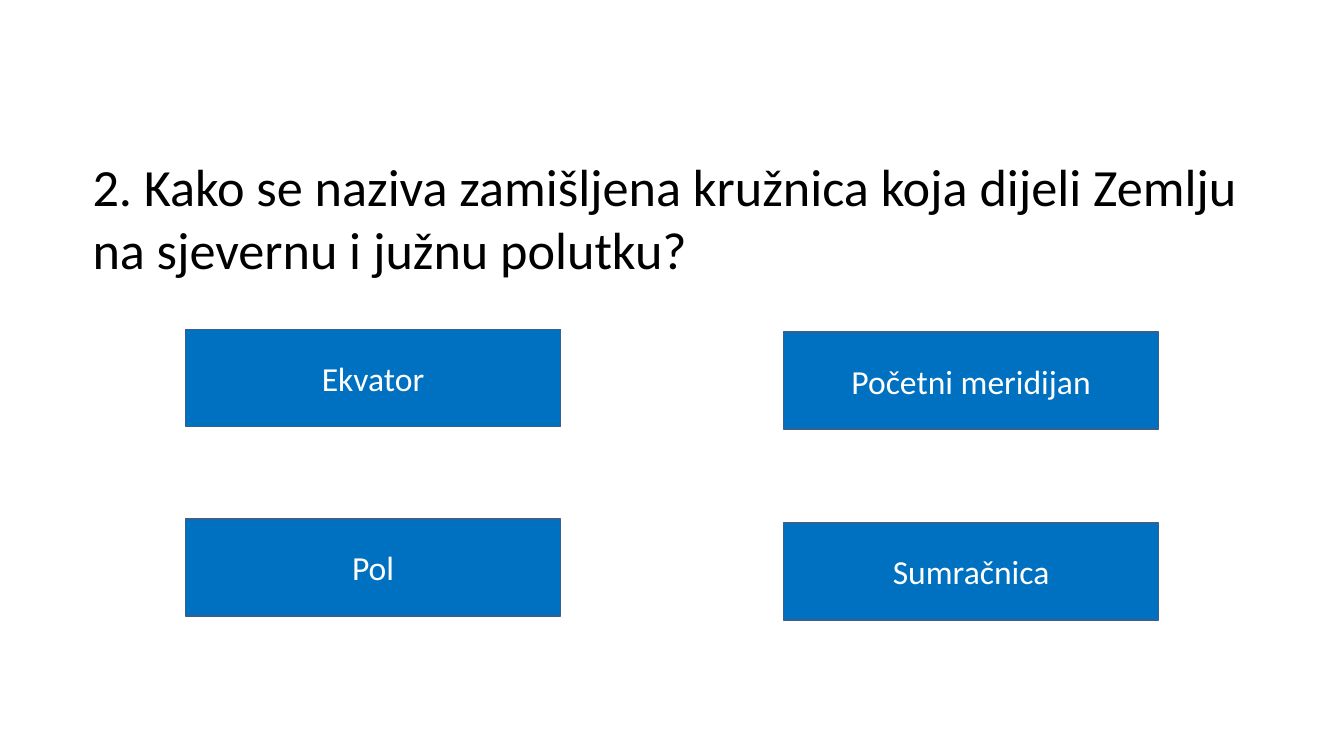
from dataclasses import dataclass

import pptx
import pptx.dml.color
import pptx.enum.shapes
import pptx.enum.text
import pptx.slide
import pptx.text.text
import pptx.util

Pt = pptx.util.Pt
RGBColor = pptx.dml.color.RGBColor

FONT = "Calibri"
BLACK = RGBColor(0x00, 0x00, 0x00)
WHITE = RGBColor(0xFF, 0xFF, 0xFF)
BLUE = RGBColor(0x00, 0x70, 0xC0)
BORDER = RGBColor(0x3A, 0x5F, 0x8C)

LEFT_COLUMN, RIGHT_COLUMN = 99.4, 419.8
ANSWER_WIDTH, ANSWER_HEIGHT = 200.9, 52

QUESTION = "2. Kako se naziva zamišljena kružnica koja dijeli Zemlju na sjevernu i južnu polutku?"


@dataclass
class Answer:
    text: str
    left: float
    top: float


ANSWERS = [
    Answer("Ekvator", LEFT_COLUMN, 176.4),
    Answer("Početni meridijan", RIGHT_COLUMN, 178),
    Answer("Pol", LEFT_COLUMN, 278),
    Answer("Sumračnica", RIGHT_COLUMN, 280.2),
]


def write(tf: pptx.text.text.TextFrame, text: str, size: float, color: RGBColor) -> None:
    tf.text = text
    tf.word_wrap = True
    font = tf.paragraphs[0].runs[0].font
    font.name = FONT
    font.size = Pt(size)
    font.color.rgb = color


def add_question(s: pptx.slide.Slide, text: str) -> None:
    sp = s.shapes.add_textbox(Pt(42.5), Pt(79.2), Pt(648.7), Pt(74.9))
    write(sp.text_frame, text, 28, BLACK)
    sp.text_frame.auto_size = pptx.enum.text.MSO_AUTO_SIZE.SHAPE_TO_FIT_TEXT


def add_answer(s: pptx.slide.Slide, answer: Answer) -> None:
    sp = s.shapes.add_shape(
        pptx.enum.shapes.MSO_SHAPE.RECTANGLE,
        Pt(answer.left), Pt(answer.top), Pt(ANSWER_WIDTH), Pt(ANSWER_HEIGHT),
    )
    sp.shadow.inherit = False
    sp.fill.solid()
    sp.fill.fore_color.rgb = BLUE
    sp.line.color.rgb = BORDER
    sp.line.width = Pt(0)
    tf = sp.text_frame
    write(tf, answer.text, 18, WHITE)
    tf.vertical_anchor = pptx.enum.text.MSO_ANCHOR.MIDDLE
    tf.paragraphs[0].alignment = pptx.enum.text.PP_ALIGN.CENTER


def main() -> None:
    prs = pptx.Presentation()
    prs.slide_width, prs.slide_height = Pt(720), Pt(405)
    s = prs.slides.add_slide(prs.slide_layouts[6])
    add_question(s, QUESTION)
    for answer in ANSWERS:
        add_answer(s, answer)
    prs.save("out.pptx")


if __name__ == "__main__":
    main()
